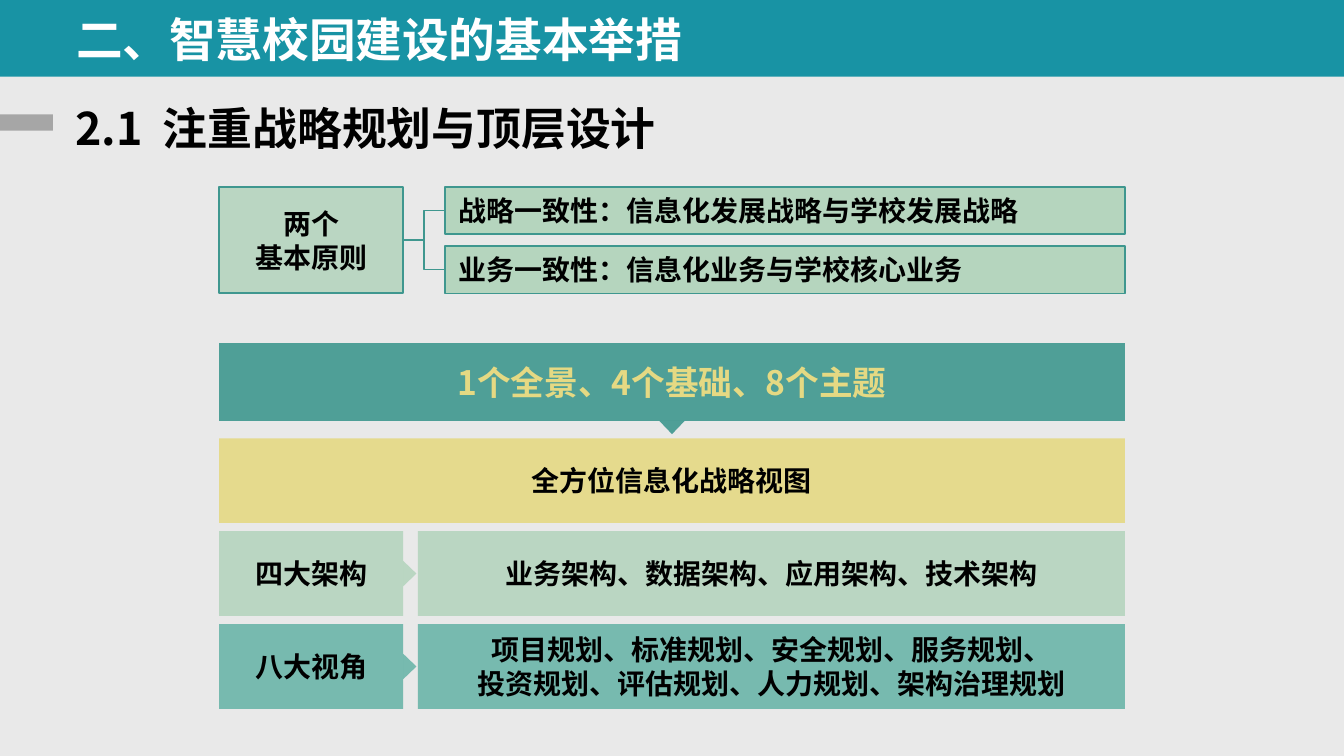
"""Build the slide on strategic planning and top-level design of a smart campus."""
from lxml import etree
from pptx import Presentation
from pptx.dml.color import RGBColor
from pptx.enum.shapes import MSO_CONNECTOR, MSO_SHAPE
from pptx.enum.text import MSO_ANCHOR, PP_ALIGN
from pptx.oxml.ns import qn
from pptx.util import Cm, Pt

RECT, TRIANGLE = MSO_SHAPE.RECTANGLE, MSO_SHAPE.ISOSCELES_TRIANGLE
ELBOW = MSO_CONNECTOR.ELBOW
LEFT, CENTER = PP_ALIGN.LEFT, PP_ALIGN.CENTER
TOP, MIDDLE = MSO_ANCHOR.TOP, MSO_ANCHOR.MIDDLE

FONT = "Noto Sans CJK SC"
BACKGROUND = RGBColor(0xE9, 0xE9, 0xE9)
HEADER = RGBColor(0x18, 0x93, 0xA4)
GRAY = RGBColor(0xA6, 0xA6, 0xA6)
PALE_GREEN = RGBColor(0xB5, 0xD5, 0xBE)
TEAL = RGBColor(0x6B, 0xB5, 0xA9)
DEEP_TEAL = RGBColor(0x3F, 0x97, 0x8F)
YELLOW = RGBColor(0xE5, 0xD9, 0x83)
BLACK = RGBColor(0, 0, 0)
WHITE = RGBColor(0xFF, 0xFF, 0xFF)

CHAPTER = "二、智慧校园建设的基本举措"
SECTION = "2.1  注重战略规划与顶层设计"
PRINCIPLES_LABEL = "两个\n基本原则"
PRINCIPLES = [
    "战略一致性：信息化发展战略与学校发展战略",
    "业务一致性：信息化业务与学校核心业务",
]
BANNER = "1个全景、4个基础、8个主题"
OVERVIEW = "全方位信息化战略视图"
ROWS = [
    ("四大架构", "业务架构、数据架构、应用架构、技术架构", PALE_GREEN),
    ("八大视角", "项目规划、标准规划、安全规划、服务规划、\n"
                 "投资规划、评估规划、人力规划、架构治理规划", TEAL),
]

SLIDE_W, SLIDE_H = 25.4, 14.28
GRID_LEFT, GRID_W = 4.14, 17.12
GRID_RIGHT = GRID_LEFT + GRID_W
LABEL_W = 3.48
PRINCIPLE_LEFT, PRINCIPLE_TOP, PRINCIPLE_H, PRINCIPLE_STEP = 8.41, 3.53, 0.89, 1.12
BANNER_TOP, BANNER_H = 6.48, 1.47
ROW_TOP, ROW_H, ROW_STEP = 8.28, 1.6, 1.755
DETAIL_LEFT = 7.9
POINTER_W, POINTER_H = 0.48, 0.25


def write(shape, text, size=15, color=BLACK, align=CENTER, anchor=MIDDLE, spacing=None):
    frame = shape.text_frame
    frame.word_wrap = True
    frame.vertical_anchor = anchor
    frame.text = text
    for paragraph in frame.paragraphs:
        paragraph.alignment = align
        if spacing:
            paragraph.line_spacing = spacing
        for run in paragraph.runs:
            run.font.size, run.font.bold, run.font.name = Pt(size), True, FONT
            run.font.color.rgb = color
            east_asian = etree.SubElement(run.font._element, qn("a:ea"))
            east_asian.set("typeface", FONT)


def add_block(slide, left, top, width, height, fill, opacity=100, border=None, kind=RECT):
    block = slide.shapes.add_shape(kind, Cm(left), Cm(top), Cm(width), Cm(height))
    block.shadow.inherit = False
    block.fill.solid()
    block.fill.fore_color.rgb = fill
    if opacity < 100:
        color = block.fill._xPr.find(qn("a:solidFill"))[0]
        etree.SubElement(color, qn("a:alpha")).set("val", str(opacity * 1000))
    if border:
        block.line.color.rgb = DEEP_TEAL
        block.line.width = Pt(border)
    else:
        block.line.fill.background()
    return block


def add_pointer(slide, center_x, center_y, fill, rotation):
    pointer = add_block(slide, center_x - POINTER_W / 2, center_y - POINTER_H / 2,
                        POINTER_W, POINTER_H, fill, 90, kind=TRIANGLE)
    pointer.rotation = rotation


def add_heading(slide, text, left, top, width, height, size, color):
    heading = slide.shapes.add_textbox(Cm(left), Cm(top), Cm(width), Cm(height))
    write(heading, text, size, color, LEFT, TOP, Pt(30))


def add_headings(slide):
    add_block(slide, 0, 0, SLIDE_W, 1.45, HEADER)
    add_block(slide, 0, 2.16, 1, 0.31, GRAY)
    add_heading(slide, CHAPTER, 1.19, 0.08, 22.86, 1.27, 25, WHITE)
    add_heading(slide, SECTION, 1.17, 1.73, 22.07, 1.37, 24, BLACK)


def add_principles(slide):
    label = add_block(slide, GRID_LEFT, PRINCIPLE_TOP, LABEL_W,
                      PRINCIPLE_STEP + PRINCIPLE_H, PALE_GREEN, 90, 1)
    write(label, PRINCIPLES_LABEL)
    for index, text in enumerate(PRINCIPLES):
        principle = add_block(slide, PRINCIPLE_LEFT, PRINCIPLE_TOP + index * PRINCIPLE_STEP,
                              GRID_RIGHT - PRINCIPLE_LEFT, PRINCIPLE_H, PALE_GREEN, border=0.75)
        write(principle, text, align=LEFT)
        principle.text_frame.margin_top = principle.text_frame.margin_bottom = 0
        branch = slide.shapes.add_connector(ELBOW, 0, 0, 0, 0)
        branch.begin_connect(label, 3)
        branch.end_connect(principle, 1)
        branch.line.color.rgb = DEEP_TEAL
        branch.line.width = Pt(0.75)
        etree.SubElement(branch._element.spPr, qn("a:effectLst"))


def add_framework(slide):
    overview = add_block(slide, GRID_LEFT, ROW_TOP, GRID_W, ROW_H, YELLOW, 90)
    write(overview, OVERVIEW)
    for index, (name, detail, fill) in enumerate(ROWS, start=1):
        top = ROW_TOP + index * ROW_STEP
        label = add_block(slide, GRID_LEFT, top, LABEL_W, ROW_H, fill, 90)
        write(label, name)
        content = add_block(slide, DETAIL_LEFT, top, GRID_RIGHT - DETAIL_LEFT, ROW_H, fill, 90)
        write(content, detail)
        add_pointer(slide, GRID_LEFT + LABEL_W + POINTER_H / 2, top + ROW_H / 2, fill, 90)
    banner = add_block(slide, GRID_LEFT, BANNER_TOP, GRID_W, BANNER_H, DEEP_TEAL, 90)
    write(banner, BANNER, 18, YELLOW)
    add_pointer(slide, GRID_LEFT + GRID_W / 2, BANNER_TOP + BANNER_H + POINTER_H / 2,
                DEEP_TEAL, 180)


def main():
    deck = Presentation()
    deck.slide_width, deck.slide_height = Cm(SLIDE_W), Cm(SLIDE_H)
    slide = deck.slides.add_slide(deck.slide_layouts[6])
    slide.background.fill.solid()
    slide.background.fill.fore_color.rgb = BACKGROUND
    add_headings(slide)
    add_principles(slide)
    add_framework(slide)
    deck.save("out.pptx")


if __name__ == "__main__":
    main()
